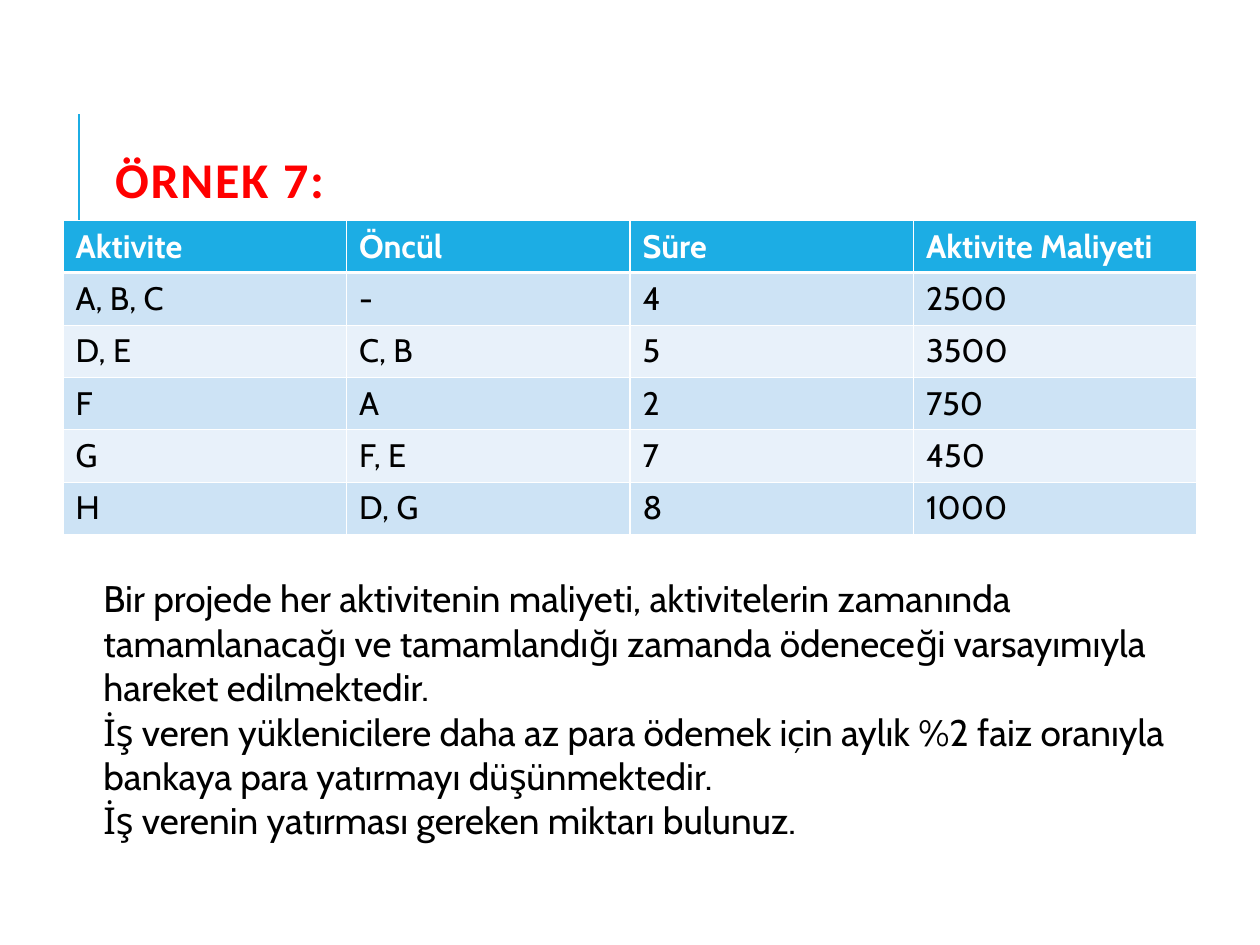
from dataclasses import dataclass

from lxml.etree import SubElement
from pptx import Presentation
from pptx.dml.color import RGBColor
from pptx.enum.shapes import MSO_CONNECTOR
from pptx.enum.text import MSO_ANCHOR, MSO_AUTO_SIZE, PP_ALIGN
from pptx.oxml import parse_xml
from pptx.oxml.ns import nsdecls, qn
from pptx.util import Inches, Pt

WIDTH, HEIGHT = 14, 10.5
MARGIN = WIDTH / 20
ACCENT, WHITE, BLACK, RED = "1CADE4", "FFFFFF", "000000", "FF0000"
BANDS = ("CDE3F5", "E8F1FA")

ACTIVITIES = (
    ("Aktivite", "Öncül", "Süre", "Aktivite Maliyeti"),
    ("A, B, C", "-", "4", "2500"),
    ("D, E", "C, B", "5", "3500"),
    ("F", "A", "2", "750"),
    ("G", "F, E", "7", "450"),
    ("H", "D, G", "8", "1000"),
)
PROBLEM = (
    "Bir projede her aktivitenin maliyeti, aktivitelerin zamanında "
    "tamamlanacağı ve tamamlandığı zamanda ödeneceği varsayımıyla "
    "hareket edilmektedir.",
    "İş veren yüklenicilere daha az para ödemek için aylık %2 faiz "
    "oranıyla bankaya para yatırmayı düşünmektedir.",
    "İş verenin yatırması gereken miktarı bulunuz.",
)


@dataclass(frozen=True)
class TextStyle:
    """Look of one run of text."""
    size: float
    color: str
    font: str = "Cabin"
    bold: bool = False


@dataclass(frozen=True)
class Area:
    """Rectangle on the slide, in inches."""
    left: float
    top: float
    width: float
    height: float

    def emu(self) -> tuple:
        """Return the four lengths for python-pptx."""
        return tuple(map(Inches, (self.left, self.top, self.width, self.height)))


TITLE_STYLE = TextStyle(40, RED, "Calibri", True)
HEADER_STYLE = TextStyle(26, WHITE, bold=True)
CELL_STYLE = TextStyle(26, BLACK)
PROBLEM_STYLE = TextStyle(29.6, BLACK)

TITLE_AREA = Area(1.18, 0.9, 11.16, 2.3)
TABLE_AREA = Area(MARGIN, 2.45, WIDTH - 2 * MARGIN, 3.49)
PROBLEM_AREA = Area(1.5 * MARGIN, 6.35, 12.02, 3.09)


def rgb(color: str) -> RGBColor:
    """Turn a hex string into a colour."""
    return RGBColor.from_string(color)


def add_run(paragraph, text: str, style: TextStyle):
    """Append a styled run to a paragraph."""
    run = paragraph.add_run()
    run.text = text
    run.font.name = style.font
    run.font.size = Pt(style.size)
    run.font.bold = style.bold
    run.font.color.rgb = rgb(style.color)
    return run


def set_borders(cell, bottom: float) -> None:
    """Draw white borders around a cell."""
    properties = cell._tc.get_or_add_tcPr()
    sides = (("L", 1), ("R", 1), ("T", 1), ("B", bottom))
    for position, (side, points) in enumerate(sides):
        properties.insert(position, parse_xml(
            f'<a:ln{side} {nsdecls("a")} w="{Pt(points)}"><a:solidFill>'
            f'<a:srgbClr val="{WHITE}"/></a:solidFill></a:ln{side}>'))


def add_title(slide, text: str) -> None:
    """Place and format the title placeholder."""
    title = slide.shapes.title
    title.left, title.top, title.width, title.height = TITLE_AREA.emu()
    frame = title.text_frame
    frame.auto_size = MSO_AUTO_SIZE.NONE
    frame.vertical_anchor = MSO_ANCHOR.MIDDLE
    heading = frame.paragraphs[0]
    heading.alignment = PP_ALIGN.LEFT
    heading.line_spacing = 0.8
    run = add_run(heading, text, TITLE_STYLE)
    run.font._element.set("spc", "140")


def add_rule(slide, x: float, top: float, bottom: float) -> None:
    """Draw the vertical accent line beside the title."""
    rule = slide.shapes.add_connector(
        MSO_CONNECTOR.STRAIGHT, *map(Inches, (x, bottom, x, top)))
    rule.line.color.rgb = rgb(ACCENT)
    rule.line.width = Pt(1.5)
    SubElement(rule._element.spPr, qn("a:effectLst"))


def add_activities(slide) -> None:
    """Draw the banded activity table."""
    table = slide.shapes.add_table(
        len(ACTIVITIES), len(ACTIVITIES[0]), *TABLE_AREA.emu()).table
    for row, values in enumerate(ACTIVITIES):
        header = row == 0
        for column, value in enumerate(values):
            cell = table.cell(row, column)
            cell.margin_left = cell.margin_right = Inches(0.14)
            cell.margin_top = cell.margin_bottom = Inches(0.07)
            cell.fill.solid()
            cell.fill.fore_color.rgb = rgb(ACCENT if header else BANDS[(row - 1) % 2])
            set_borders(cell, 3 if header else 1)
            add_run(cell.text_frame.paragraphs[0], value,
                    HEADER_STYLE if header else CELL_STYLE)


def add_problem(slide) -> None:
    """Write the problem statement below the table."""
    frame = slide.shapes.add_textbox(*PROBLEM_AREA.emu()).text_frame
    frame.word_wrap = True
    frame.auto_size = MSO_AUTO_SIZE.SHAPE_TO_FIT_TEXT
    for index, sentence in enumerate(PROBLEM):
        paragraph = frame.add_paragraph() if index else frame.paragraphs[0]
        add_run(paragraph, sentence, PROBLEM_STYLE)


def main() -> None:
    """Build and save the slide."""
    deck = Presentation()
    deck.slide_width, deck.slide_height = Inches(WIDTH), Inches(HEIGHT)
    slide = deck.slides.add_slide(deck.slide_layouts.get_by_name("Title Only"))
    add_title(slide, "ÖRNEK 7:")
    add_rule(slide, 0.88, 1.27, 2.67)
    add_activities(slide)
    add_problem(slide)
    deck.save("out.pptx")


if __name__ == "__main__":
    main()
